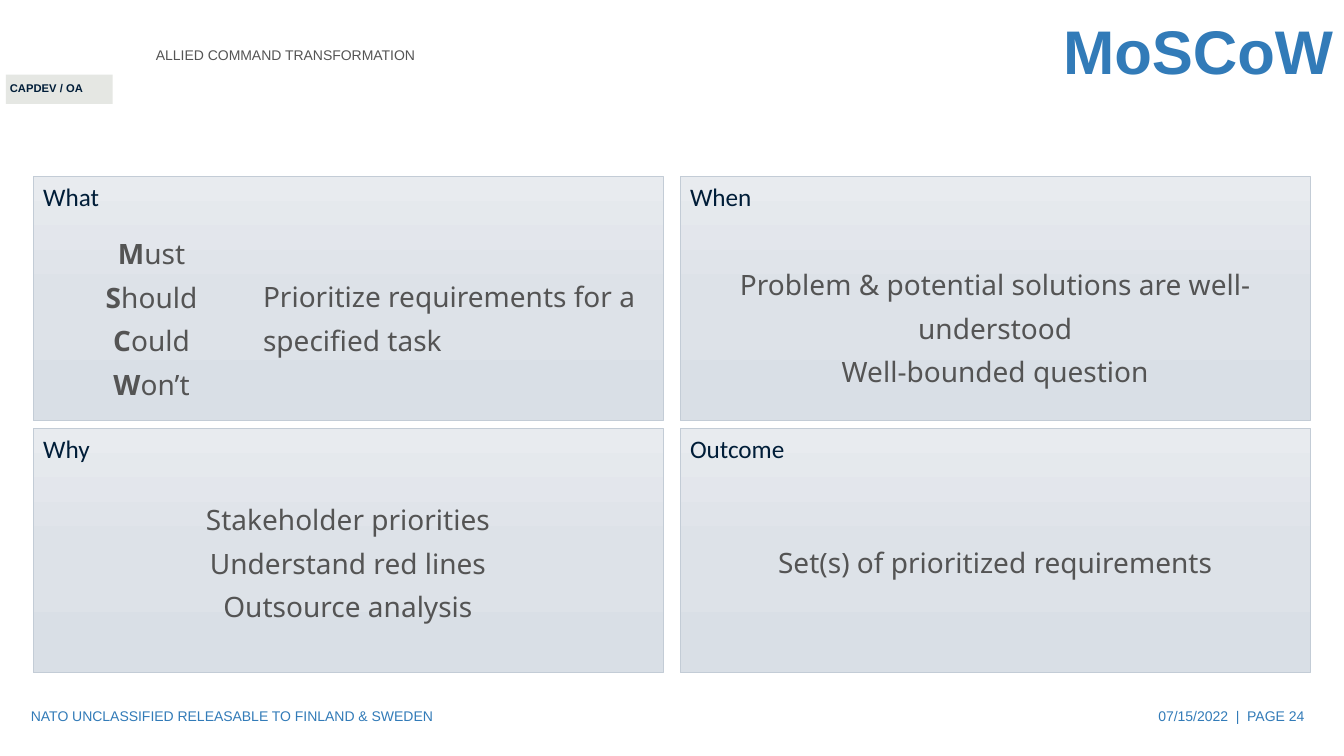
import copy

import pptx
import pptx.dml.color
import pptx.enum.shapes
import pptx.enum.text
import pptx.oxml.ns
import pptx.util

Cm = pptx.util.Cm
Pt = pptx.util.Pt
ALIGN = pptx.enum.text.PP_ALIGN
ANCHOR = pptx.enum.text.MSO_ANCHOR
AUTO = pptx.enum.text.MSO_AUTO_SIZE

NAVY, BLUE, GREY = "001D38", "327BB8", "545454"


def color(value):
    return pptx.dml.color.RGBColor.from_string(value)


def add_run(p, text, size, font, fill, bold=False):
    r = p.add_run()
    r.text = text
    r.font.size = Pt(size)
    r.font.name = font
    r.font.bold = bold
    r.font.color.rgb = color(fill)


def add_text(s, box, size, fill, paragraphs, font="Arial", align=ALIGN.LEFT,
             anchor=ANCHOR.MIDDLE, spacing=None, wrap=True, fit=AUTO.NONE):
    tf = s.shapes.add_textbox(*map(Cm, box)).text_frame
    tf.word_wrap = wrap
    tf.auto_size = fit
    tf.vertical_anchor = anchor
    for i, runs in enumerate(paragraphs):
        p = tf.add_paragraph() if i else tf.paragraphs[0]
        p.alignment = align
        p.line_spacing = spacing
        for text, bold in runs:
            add_run(p, text, size, font, fill, bold)


def add_body(s, box, paragraphs, align=ALIGN.CENTER):
    add_text(s, box, 20, GREY, paragraphs, "Noto Sans", align,
             spacing=1.3, fit=AUTO.SHAPE_TO_FIT_TEXT)


def add_rect(s, box):
    sp = s.shapes.add_shape(pptx.enum.shapes.MSO_SHAPE.RECTANGLE, *map(Cm, box))
    sp.shadow.inherit = False
    return sp


def fill_gradient(sp, colors):
    sp.fill.gradient()
    sp.fill.gradient_angle = 270
    gs_list = sp._element.spPr.find(".//" + pptx.oxml.ns.qn("a:gsLst"))
    gs_list.insert(1, copy.deepcopy(gs_list[0]))
    for i, (stop, value) in enumerate(zip(sp.fill.gradient_stops, colors)):
        stop.color.rgb = color(value)
        stop.position = i / (len(colors) - 1)


def add_panel(s, box, heading):
    sp = add_rect(s, box)
    fill_gradient(sp, ["E8EBEF", "DDE2E8", "D9DFE6"])
    sp.line.color.rgb = color("C3CCD6")
    sp.line.width = Pt(0.5)
    sp.text_frame.vertical_anchor = ANCHOR.TOP
    p = sp.text_frame.paragraphs[0]
    p.alignment = ALIGN.LEFT
    add_run(p, heading, 18, "Calibri", NAVY)


def set_title(s, box, text):
    title = s.shapes.title
    title.left, title.top, title.width, title.height = map(Cm, box)
    tf = title.text_frame
    tf.auto_size = AUTO.NONE
    tf.vertical_anchor = ANCHOR.MIDDLE
    p = tf.paragraphs[0]
    p.alignment = ALIGN.RIGHT
    p.line_spacing = 0.9
    add_run(p, text, 44, "Arial", BLUE, True)


def add_header(s):
    add_text(s, (3.68, 0.64, 15, 1.5), 10, GREY,
             [[("ALLIED COMMAND TRANSFORMATION", False)]])
    tag = add_rect(s, (0.15, 1.88, 2.69, 0.74))
    tag.fill.solid()
    tag.fill.fore_color.rgb = color("E5E7E3")
    tag.line.fill.background()
    add_text(s, (0, 1.93, 2.36, 0.61), 8, NAVY, [[("CAPDEV / OA", True)]],
             anchor=ANCHOR.TOP, wrap=False, fit=AUTO.SHAPE_TO_FIT_TEXT)
    set_title(s, (4.65, 0, 29.21, 2.74), "MoSCoW")


def add_footer(s):
    add_text(s, (25.5, 17.53, 7.62, 1.02), 10, BLUE,
             [[("07/15/2022  |  PAGE 24", False)]], align=ALIGN.RIGHT)
    add_text(s, (0.53, 17.53, 11.43, 1.02), 10, BLUE,
             [[("NATO UNCLASSIFIED RELEASABLE TO FINLAND & SWEDEN", False)]])


def main():
    prs = pptx.Presentation()
    prs.slide_width, prs.slide_height = Cm(33.87), Cm(19.05)
    s = prs.slides.add_slide(prs.slide_layouts[5])
    add_header(s)

    for i, heading in enumerate(["What", "When", "Why", "Outcome"]):
        row, col = divmod(i, 2)
        add_panel(s, (0.84 + col * 16.3, 4.45 + row * 6.35, 15.88, 6.15), heading)

    priorities = ["Must", "Should", "Could", "Won’t"]
    add_body(s, (1.9, 5.56, 3.84, 4.7),
             [[(word[0], True), (word[1:], False)] for word in priorities])
    add_body(s, (6.38, 6.65, 9.93, 2.49),
             [[("Prioritize requirements for a specified task", False)]], ALIGN.LEFT)
    for left, top, height, lines in [
        (17.78, 6.35, 3.58, ["Problem & potential solutions are well-understood",
                             "Well-bounded question"]),
        (1.47, 12.27, 3.58, ["Stakeholder priorities", "Understand red lines",
                             "Outsource analysis"]),
        (17.78, 13.36, 1.37, ["Set(s) of prioritized requirements"]),
    ]:
        add_body(s, (left, top, 14.6, height), [[(line, False)] for line in lines])

    add_footer(s)
    prs.save("out.pptx")


if __name__ == "__main__":
    main()
